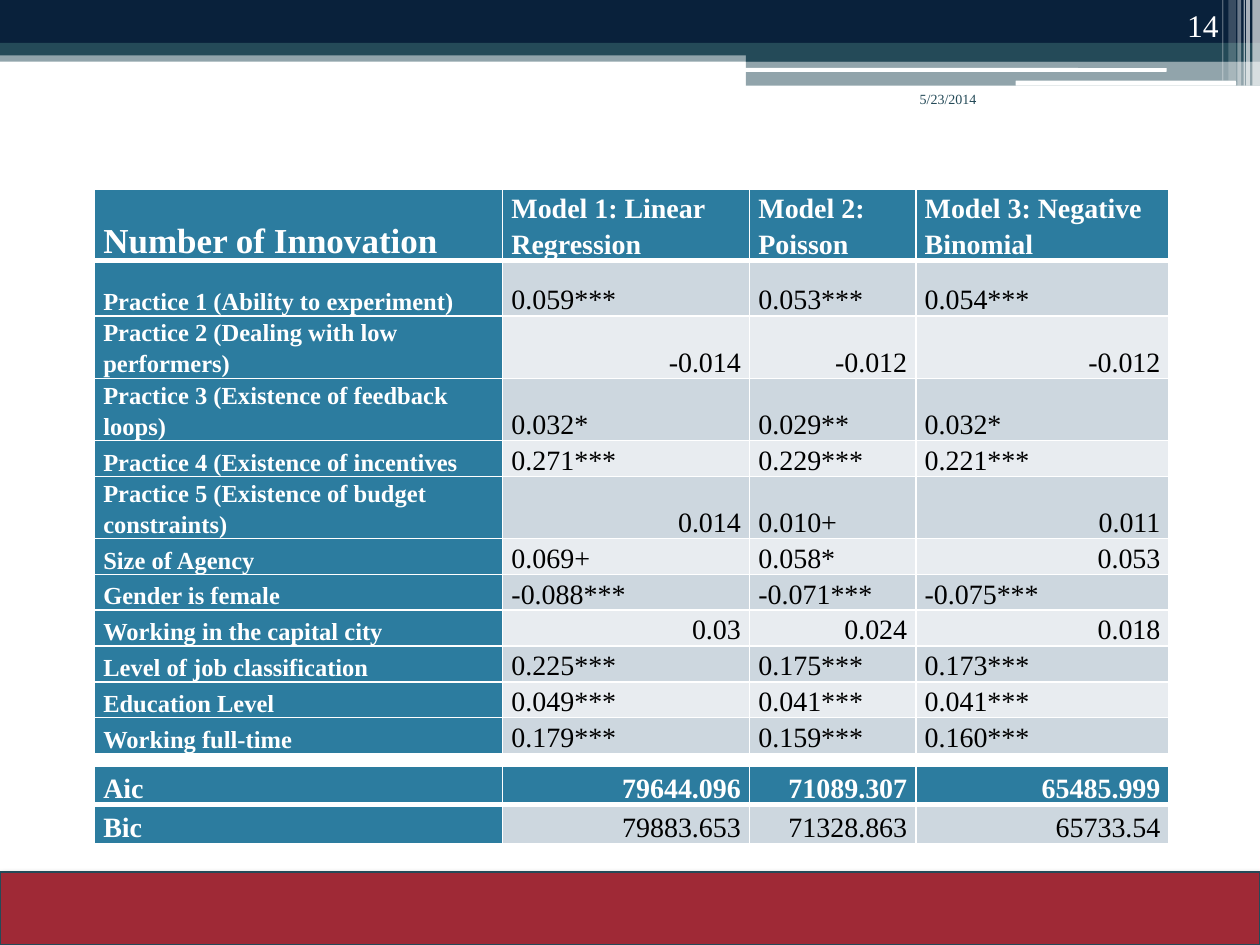
from lxml import etree
from pptx import Presentation, util as u
from pptx.dml.color import RGBColor
from pptx.enum import shapes, text
from pptx.oxml import ns, parse_xml

TEAL, NAVY, WHITE = "244A58", "09213B", "FFFFFF"
BLUE, RED, BLACK = "2C7C9F", "9F2936", "000000"
BANDS = ["CDD7DF", "E8ECF0"]
COLS = [3.24, 1.96, 1.32, 2.01]

MODELS = [
    ["Number of Innovation", "Model 1: Linear Regression", "Model 2: Poisson",
     "Model 3: Negative Binomial"],
    ["Practice 1 (Ability to experiment)", "0.059***", "0.053***", "0.054***"],
    ["Practice 2 (Dealing with low performers)", "-0.014", "-0.012", "-0.012"],
    ["Practice 3 (Existence of feedback loops)", "0.032*", "0.029**", "0.032*"],
    ["Practice 4 (Existence of incentives", "0.271***", "0.229***", "0.221***"],
    ["Practice 5 (Existence of budget constraints)", "0.014", "0.010+", "0.011"],
    ["Size of Agency", "0.069+", "0.058*", "0.053"],
    ["Gender is female", "-0.088***", "-0.071***", "-0.075***"],
    ["Working in the capital city", "0.03", "0.024", "0.018"],
    ["Level of job classification", "0.225***", "0.175***", "0.173***"],
    ["Education Level", "0.049***", "0.041***", "0.041***"],
    ["Working full-time", "0.179***", "0.159***", "0.160***"],
]
FITS = [
    ["Aic", "79644.096", "71089.307", "65485.999"],
    ["Bic", "79883.653", "71328.863", "65733.54"],
]


def color(code):
    return RGBColor.from_string(code)


def write(frame, words, size=16, ink=BLACK, bold=False, right=False,
          space=None, face="Times New Roman"):
    """Put one formatted paragraph in a text frame."""
    para = frame.paragraphs[0]
    para.alignment = text.PP_ALIGN.RIGHT if right else text.PP_ALIGN.LEFT
    if space:
        para.line_spacing = space
    run = para.add_run()
    run.text = words
    font = run.font
    font.name, font.size, font.bold = face, u.Pt(size), bold
    font.color.rgb = color(ink)


class Deck:
    """Holds the style and the current slide."""

    def __init__(self):
        self.pres = Presentation()
        self.pres.slide_width = u.Inches(10)
        self.pres.slide_height = u.Inches(7.5)
        self.slide = self.pres.slides.add_slide(self.pres.slide_layouts[6])

    def bar(self, x, y, w, h, fill, alpha=100, round=False, line=None):
        kind = shapes.MSO_SHAPE.ROUNDED_RECTANGLE if round else shapes.MSO_SHAPE.RECTANGLE
        bar = self.slide.shapes.add_shape(kind, *map(u.Inches, (x, y, w, h)))
        bar.shadow.inherit = False
        bar.fill.solid()
        bar.fill.fore_color.rgb = color(fill)
        if alpha < 100:
            tint = bar._element.spPr.find(".//" + ns.qn("a:srgbClr"))
            etree.SubElement(tint, ns.qn("a:alpha"), val=str(alpha * 1000))
        if line:
            bar.line.color.rgb = color(line)
            bar.line.width = u.Pt(0.75)
        else:
            bar.line.fill.background()
        return bar

    def shade(self, bar):
        """Give a bar a soft shadow straight below it."""
        glow = bar._element.spPr.find(ns.qn("a:effectLst"))
        glow.append(parse_xml(
            f'<a:outerShdw {ns.nsdecls("a")} blurRad="{u.Pt(4)}" dist="{u.Pt(2)}" '
            f'dir="5400000" rotWithShape="0"><a:srgbClr val="{BLACK}">'
            '<a:alpha val="45000"/></a:srgbClr></a:outerShdw>'))

    def label(self, x, y, w, h, words, low=False, **style):
        box = self.slide.shapes.add_textbox(*map(u.Inches, (x, y, w, h)))
        frame = box.text_frame
        frame.word_wrap = True
        if low:
            frame.vertical_anchor = text.MSO_ANCHOR.BOTTOM
        write(frame, words, **style)

    def edge(self, cell, **widths):
        """Draw white cell borders, in points by side."""
        props = cell._tc.get_or_add_tcPr()
        for side in "LRTB":
            props.append(parse_xml(
                f'<a:ln{side} {ns.nsdecls("a")} w="{u.Pt(widths.get(side, 1))}">'
                f'<a:solidFill><a:srgbClr val="{WHITE}"/></a:solidFill></a:ln{side}>'))

    def table(self, x, y, h, data, tall, sizes):
        """Draw a banded table; sizes are corner, head, stub and value."""
        part = self.slide.shapes.add_table(
            len(data), len(COLS), *map(u.Inches, (x, y, sum(COLS), h)))
        grid = part.table
        for col, wide in zip(grid.columns, COLS):
            col.width = u.Inches(wide)
        for r, row in enumerate(data):
            grid.rows[r].height = u.Inches(tall[r])
            for c, words in enumerate(row):
                cell = grid.cell(r, c)
                head = r == 0 or c == 0
                self.edge(cell, T=3 if r == 1 else 1, B=3 if r == 0 else 1)
                cell.fill.solid()
                cell.fill.fore_color.rgb = color(BLUE if head else BANDS[(r - 1) % 2])
                cell.margin_left = cell.margin_right = u.Inches(0.07)
                cell.margin_top = cell.margin_bottom = 0
                cell.vertical_anchor = text.MSO_ANCHOR.BOTTOM
                # Plain numbers go right; names and starred values go left
                write(cell.text_frame, words, size=sizes[2 * (r > 0) + (c > 0)],
                      ink=WHITE if head else BLACK, bold=head,
                      right=words[-1].isdigit(), space=1.15)
        part.height = u.Inches(h)


def main():
    deck = Deck()

    # Top band
    deck.bar(0, 0.4, 10, 0.09, TEAL, alpha=50)
    deck.bar(0, 0, 10, 0.34, NAVY)
    deck.bar(0, 0.34, 10, 0.1, TEAL)
    deck.bar(5.92, 0.39, 4.08, 0.1, TEAL)
    deck.bar(5.92, 0.48, 4.08, 0.2, TEAL, alpha=50)
    deck.bar(5.91, 0.54, 3.35, 0.03, WHITE, round=True)
    deck.bar(8.06, 0.64, 1.75, 0.04, WHITE, round=True)

    # Pale stripes at the right end
    for x, w, h, alpha in [(9.94, 0.06, 0.68, 65), (9.89, 0.03, 0.68, 65),
                           (9.87, 0.01, 0.68, 60), (9.82, 0.03, 0.68, 40),
                           (9.75, 0.06, 0.64, 20), (9.7, 0.01, 0.64, 30)]:
        deck.bar(x, 0, w, h, WHITE, alpha=alpha)

    # Bottom band
    deck.shade(deck.bar(0, 6.92, 10, 0.58, RED, line=TEAL))

    # Model results, date, page number and fit measures
    deck.table(0.75, 1.5, 4.55, MODELS, [0.21, 0.44] + [0.22] * 10, [20, 16, 14, 16])
    deck.label(7.2, 0.67, 1.05, 0.5, "5/23/2014", size=8, ink=TEAL)
    deck.label(8.94, 0, 0.83, 0.4, "14", low=True, size=18, ink=WHITE, right=True)
    deck.table(0.75, 6.08, 0.56, FITS, [0.21, 0.21], [16] * 4)

    deck.pres.save("out.pptx")


if __name__ == "__main__":
    main()
